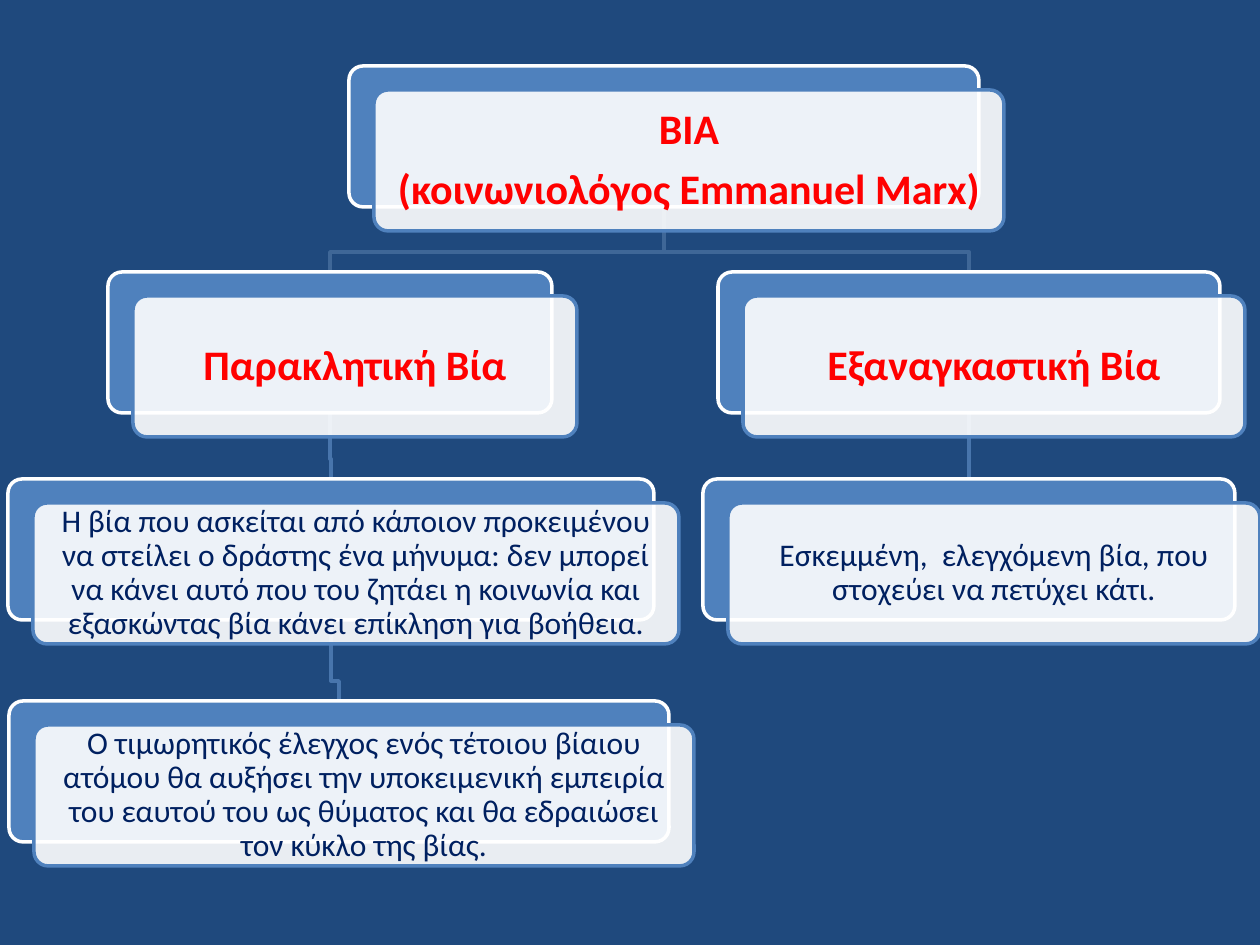
from dataclasses import dataclass

from lxml import etree
from pptx import Presentation
from pptx import util as u
from pptx.dml.color import RGBColor
from pptx.enum import shapes, text
from pptx.oxml.ns import qn

PX = 914400 // 126
CARD_H, SHIFT_X, SHIFT_Y, BEND = 141, 25, 24, 20


@dataclass(frozen=True)
class Theme:
    background: str = "1F497D"
    accent: str = "4F81BD"
    light: str = "FFFFFF"
    heading: str = "FF0000"
    body: str = "002060"
    upper_link: str = "3F6797"
    lower_link: str = "4875AC"
    font: str = "Calibri"
    heading_size: int = 24
    body_size: int = 18
    line_width: int = 2
    front_alpha: int = 90


THEME = Theme()

CARDS = {
    "violence": (349, 66, 630, True, ["ΒΙΑ", "(κοινωνιολόγος Emmanuel Marx)"]),
    "appeal": (108, 272, 444, True, ["Παρακλητική Βία"]),
    "appeal_meaning": (8, 479, 646, False, [
        "Η βία που ασκείται από κάποιον προκειμένου να στείλει ο δράστης ένα "
        "μήνυμα: δεν μπορεί να κάνει αυτό που του ζητάει η κοινωνία και "
        "εξασκώντας βία κάνει επίκληση για βοήθεια."]),
    "appeal_result": (9, 701, 660, False, [
        "Ο τιμωρητικός έλεγχος ενός τέτοιου βίαιου ατόμου θα αυξήσει την "
        "υποκειμενική εμπειρία του εαυτού του ως θύματος και θα εδραιώσει τον "
        "κύκλο της βίας."]),
    "coercion": (718, 272, 502, True, ["Εξαναγκαστική Βία"]),
    "coercion_meaning": (703, 479, 532, False, [
        "Εσκεμμένη,  ελεγχόμενη βία, που στοχεύει να πετύχει κάτι."]),
}

LINKS = [
    ("violence", "appeal", THEME.upper_link),
    ("appeal", "appeal_meaning", THEME.lower_link),
    ("appeal_meaning", "appeal_result", THEME.lower_link),
    ("violence", "coercion", THEME.upper_link),
    ("coercion", "coercion_meaning", THEME.lower_link),
]


def rgb(value):
    return RGBColor.from_string(value)


def set_line(s, color):
    s.line.color.rgb = rgb(color)
    s.line.width = u.Pt(THEME.line_width)


def add_panel(slide, x, y, w, fill, line):
    sp = slide.shapes.add_shape(
        shapes.MSO_SHAPE.ROUNDED_RECTANGLE, x * PX, y * PX, w * PX, CARD_H * PX)
    sp.adjustments[0] = 0.1
    sp.shadow.inherit = False
    sp.fill.solid()
    sp.fill.fore_color.rgb = rgb(fill)
    set_line(sp, line)
    return sp


def set_alpha(sp, percent):
    color = sp._element.spPr.find(qn("a:solidFill")).find(qn("a:srgbClr"))
    etree.SubElement(color, qn("a:alpha"), val=str(percent * 1000))


def write_text(sp, paragraphs, heading):
    size = THEME.heading_size if heading else THEME.body_size
    inset = (12 if heading else 9) * PX
    tf = sp.text_frame
    tf.word_wrap = True
    tf.vertical_anchor = text.MSO_ANCHOR.MIDDLE
    tf.margin_left = tf.margin_right = tf.margin_top = tf.margin_bottom = inset
    for i, words in enumerate(paragraphs):
        p = tf.add_paragraph() if i else tf.paragraphs[0]
        p.text = words
        p.alignment = text.PP_ALIGN.CENTER
        p.line_spacing = 0.9
        p.space_after = u.Pt(size * 0.35)
        p.font.name = THEME.font
        p.font.size = u.Pt(size)
        p.font.bold = heading
        p.font.color.rgb = rgb(THEME.heading if heading else THEME.body)


def add_card(slide, x, y, w, heading, paragraphs):
    back = add_panel(slide, x, y, w, THEME.accent, THEME.light)
    front = add_panel(slide, x + SHIFT_X, y + SHIFT_Y, w, THEME.light, THEME.accent)
    set_alpha(front, THEME.front_alpha)
    write_text(front, paragraphs, heading)
    return back


def add_straight(slide, parent, child):
    s = slide.shapes.add_connector(shapes.MSO_CONNECTOR.STRAIGHT, 0, 0, 0, 0)
    s.begin_connect(parent, 2)
    s.end_connect(child, 0)
    etree.SubElement(s._element.spPr, qn("a:effectLst"))
    return s


def add_elbow(slide, start, end):
    bend = end[1] - BEND * PX
    builder = slide.shapes.build_freeform(*start)
    builder.add_line_segments([(start[0], bend), (end[0], bend), end], close=False)
    s = builder.convert_to_shape()
    s.fill.background()
    s.shadow.inherit = False
    return s


def add_link(slide, parent, child, color):
    start = (parent.left + parent.width // 2, parent.top + parent.height)
    end = (child.left + child.width // 2, child.top)
    if start[0] == end[0]:
        s = add_straight(slide, parent, child)
    else:
        s = add_elbow(slide, start, end)
    set_line(s, color)
    slide.shapes._spTree.insert(2, s._element)


def main():
    prs = Presentation()
    prs.slide_width, prs.slide_height = u.Inches(10), u.Inches(7.5)
    slide = prs.slides.add_slide(prs.slide_layouts[6])
    slide.background.fill.solid()
    slide.background.fill.fore_color.rgb = rgb(THEME.background)
    cards = {name: add_card(slide, *card) for name, card in CARDS.items()}
    for parent, child, color in LINKS:
        add_link(slide, cards[parent], cards[child], color)
    prs.save("out.pptx")


if __name__ == "__main__":
    main()
